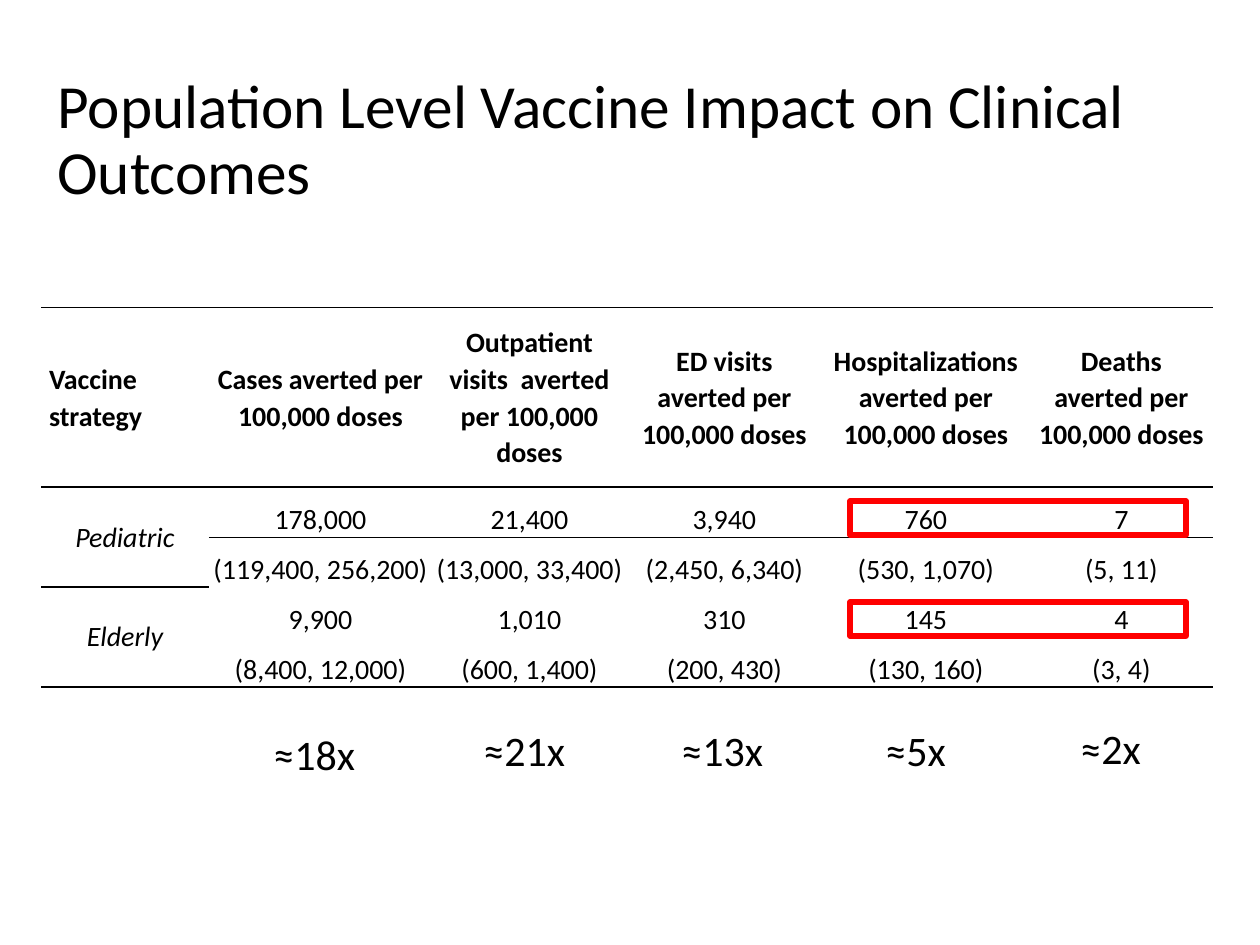
from lxml import etree
from pptx import Presentation
from pptx.dml.color import RGBColor
from pptx.enum.shapes import MSO_SHAPE as Shape
from pptx.enum.text import MSO_ANCHOR as Anchor, PP_ALIGN as Align
from pptx.oxml.ns import qn
from pptx.util import Emu, Pt

PX = 914400 / 126
COLORS = {"text": "000000", "rule": "000000", "highlight": "FF0000"}
NO_STYLE = "{2D5ABB26-0587-4C30-8999-92F81FD0307C}"
COLUMNS = [168, 223, 195, 195, 208, 183]
ROWS = [180, 50, 50, 50, 50]
DATA = [
    ["Vaccine strategy", "Cases averted per 100,000 doses",
     "Outpatient visits  averted per 100,000 doses",
     "ED visits averted per 100,000 doses",
     "Hospitalizations averted per 100,000 doses",
     "Deaths averted per 100,000 doses"],
    ["Pediatric", "178,000", "21,400", "3,940", "760", "7"],
    ["", "(119,400, 256,200)", "(13,000, 33,400)", "(2,450, 6,340)",
     "(530, 1,070)", "(5, 11)"],
    ["Elderly", "9,900", "1,010", "310", "145", "4"],
    ["", "(8,400, 12,000)", "(600, 1,400)", "(200, 430)", "(130, 160)", "(3, 4)"],
]
RATIOS = [("≈18x", 261, 722), ("≈21x", 471, 718), ("≈13x", 669, 718),
          ("≈5x", 873, 718), ("≈2x", 1068, 716)]


def px(n):
    return Emu(round(n * PX))


class Deck:
    """Holds the style and the current slide, and draws each kind of element."""

    font = "Calibri"

    def __init__(self, prs):
        self.slide = prs.slides.add_slide(prs.slide_layouts[6])

    def run(self, p, text, size, bold=False, italic=False):
        r = p.add_run()
        r.text = text
        r.font.name, r.font.size = self.font, Pt(size)
        r.font.bold, r.font.italic = bold, italic
        r.font.color.rgb = RGBColor.from_string(COLORS["text"])

    def text(self, text, box, size, anchor=Anchor.TOP, spacing=None):
        tf = self.slide.shapes.add_textbox(*map(px, box)).text_frame
        tf.word_wrap = True
        tf.vertical_anchor = anchor
        p = tf.paragraphs[0]
        p.line_spacing = spacing
        self.run(p, text, size)

    def frame(self, box):
        sp = self.slide.shapes.add_shape(Shape.RECTANGLE, *map(px, box))
        sp.shadow.inherit = False
        sp.fill.background()
        sp.line.color.rgb = RGBColor.from_string(COLORS["highlight"])
        sp.line.width = Pt(3)

    def border(self, cell, side, width):
        tc_pr = cell._tc.get_or_add_tcPr()
        ln = etree.SubElement(tc_pr, qn(f"a:ln{side}"), w=str(Pt(width)))
        fill = etree.SubElement(ln, qn("a:solidFill"))
        etree.SubElement(fill, qn("a:srgbClr"), val=COLORS["rule"])

    def cell(self, cell, text, row, col):
        header = row == 0
        label = col == 0
        cell.margin_left = cell.margin_right = px(8 if header else 1)
        cell.margin_top, cell.margin_bottom = px(0 if header else 1), 0
        cell.vertical_anchor = Anchor.MIDDLE if header or label else Anchor.BOTTOM
        if header:
            self.border(cell, "T", 0.5)
        if row in (0, 4) or label:
            self.border(cell, "B", 1)
        elif row == 1:
            self.border(cell, "B", 0.5)
        cell.fill.background()
        if text:
            p = cell.text_frame.paragraphs[0]
            p.alignment = Align.LEFT if header and label else Align.CENTER
            p.line_spacing = 1.07 if header else None
            self.run(p, text, 16, bold=header, italic=label and not header)

    def table(self, left, top, columns, rows, data):
        box = (left, top, sum(columns), sum(rows))
        tbl = self.slide.shapes.add_table(
            len(rows), len(columns), *map(px, box)).table
        tbl.first_row = tbl.horz_banding = False
        tbl._tbl.tblPr.find(qn("a:tableStyleId")).text = NO_STYLE
        for column, width in zip(tbl.columns, columns):
            column.width = px(width)
        for row, height in zip(tbl.rows, rows):
            row.height = px(height)
        for i, line in enumerate(data):
            for j, text in enumerate(line):
                self.cell(tbl.cell(i, j), text, i, j)
        for i in (1, 3):
            tbl.cell(i, 0).merge(tbl.cell(i + 1, 0))


def main():
    prs = Presentation()
    prs.slide_width, prs.slide_height = px(1260), px(945)
    deck = Deck(prs)
    deck.table(41, 307, COLUMNS, ROWS, DATA)
    for top in (501, 602):
        deck.frame((850, top, 336, 34))
    for text, left, top in RATIOS:
        deck.text(text, (left, top, 122, 64), 24)
    deck.text("Population Level Vaccine Impact on Clinical Outcomes",
              (45, 50, 1172, 183), 35, Anchor.MIDDLE, 0.9)
    prs.save("out.pptx")


if __name__ == "__main__":
    main()
